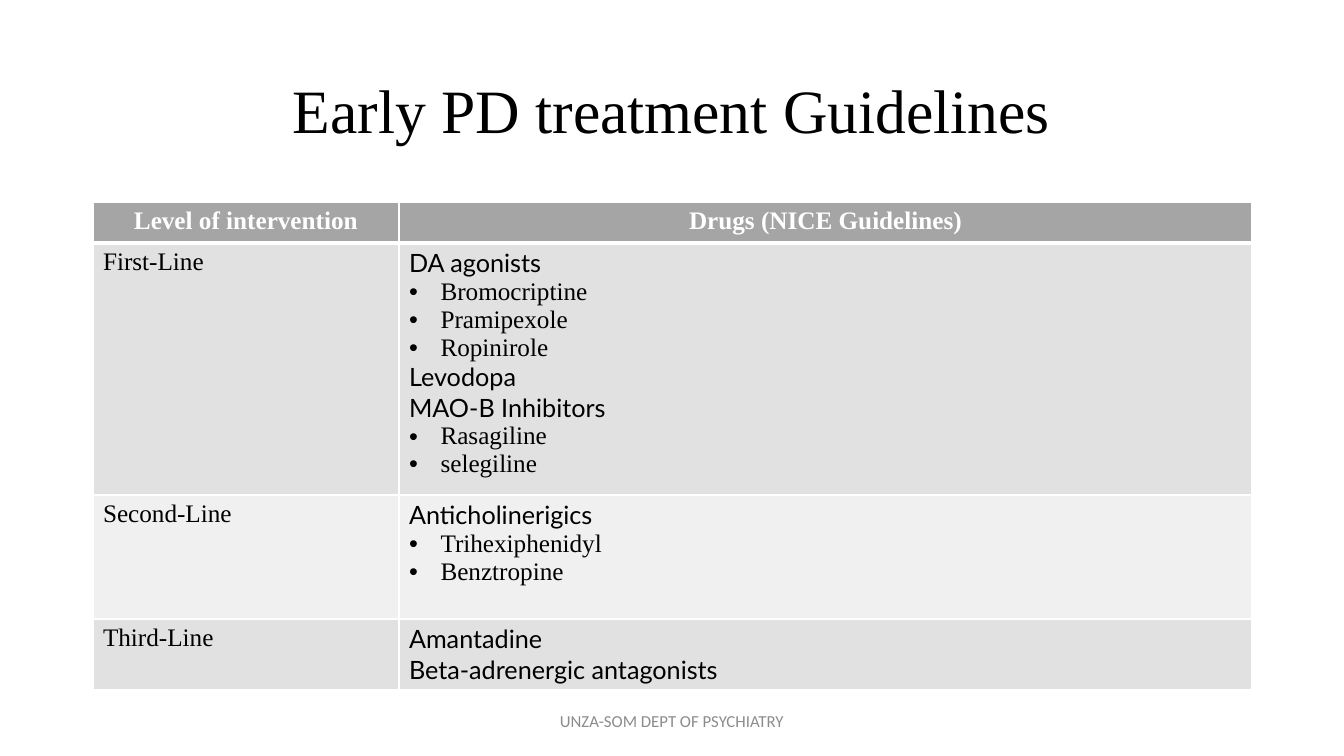
from lxml.etree import SubElement
from pptx import Presentation
from pptx.dml.color import RGBColor
from pptx.enum.text import MSO_ANCHOR as Anchor, PP_ALIGN as Align
from pptx.oxml.ns import qn
from pptx.util import Pt

THEME = {
    "serif": "Times New Roman", "sans": "Lato", "footer_font": "Calibri",
    "title_size": 44, "table_size": 18, "footer_size": 12,
    "black": "000000", "white": "FFFFFF", "footer": "8C8C8C",
    "header": "A5A5A5", "bands": ["E1E1E1", "F0F0F0"],
}
BULLET_INDENT = Pt(22.5)


def write(paragraph, text, font, size, color, bold=False, align=Align.LEFT):
    paragraph.alignment = align
    run = paragraph.add_run()
    run.text = text
    run.font.color.rgb = RGBColor.from_string(color)
    formats = {"name": font, "size": Pt(size), "bold": bold}
    for name, value in formats.items():
        setattr(run.font, name, value)


def style_cell(cell, color, top, bottom):
    properties = cell._tc.get_or_add_tcPr()
    for side, width in {"L": 1, "R": 1, "T": top, "B": bottom}.items():
        line = SubElement(properties, qn(f"a:ln{side}"), w=str(Pt(width)))
        fill = SubElement(line, qn("a:solidFill"))
        SubElement(fill, qn("a:srgbClr"), val=THEME["white"])
    cell.fill.solid()
    cell.fill.fore_color.rgb = RGBColor.from_string(color)


presentation = Presentation()
presentation.slide_width, presentation.slide_height = Pt(960), Pt(540)
slide = presentation.slides.add_slide(presentation.slide_layouts[6])

captions = [
    ("Early PD treatment Guidelines", (66, 28.75, 828, 104.4),
     THEME["serif"], THEME["title_size"], THEME["black"], 0.9),
    ("UNZA-SOM DEPT OF PSYCHIATRY", (318, 500.5, 324, 28.75),
     THEME["footer_font"], THEME["footer_size"], THEME["footer"], 1),
]
for text, box, font, size, color, spacing in captions:
    frame = slide.shapes.add_textbox(*map(Pt, box)).text_frame
    for name, value in {"word_wrap": True, "vertical_anchor": Anchor.MIDDLE}.items():
        setattr(frame, name, value)
    paragraph = frame.paragraphs[0]
    paragraph.line_spacing = spacing
    write(paragraph, text, font, size, color, align=Align.CENTER)

headings = ["Level of intervention", "Drugs (NICE Guidelines)"]
levels = [
    ("First-Line", 171.8, [
        ("DA agonists", ["Bromocriptine", "Pramipexole", "Ropinirole"]),
        ("Levodopa", []),
        ("MAO-B Inhibitors", ["Rasagiline", "selegiline"]),
    ]),
    ("Second-Line", 88.6, [("Anticholinerigics", ["Trihexiphenidyl", "Benztropine"])]),
    ("Third-Line", 50.4, [("Amantadine", []), ("Beta-adrenergic antagonists", [])]),
]
heights = [29.2] + [height for _, height, _ in levels]
table = slide.shapes.add_table(
    len(heights), len(headings), Pt(66.4), Pt(144.3), Pt(828), Pt(sum(heights))
).table
for column, width in zip(table.columns, [218.6, 609.4]):
    column.width = Pt(width)
for row, height in zip(table.rows, heights):
    row.height = Pt(height)

for column, heading in enumerate(headings):
    cell = table.cell(0, column)
    style_cell(cell, THEME["header"], 1, 3)
    write(cell.text_frame.paragraphs[0], heading, THEME["serif"],
          THEME["table_size"], THEME["white"], True, Align.CENTER)

for index, (level, _, drug_classes) in enumerate(levels):
    level_cell, drug_cell = table.rows[index + 1].cells
    for cell in (level_cell, drug_cell):
        style_cell(cell, THEME["bands"][index % 2], 3 if index == 0 else 1, 1)
    write(level_cell.text_frame.paragraphs[0], level, THEME["serif"],
          THEME["table_size"], THEME["black"])

    entries = []
    for drug_class, drugs in drug_classes:
        entries.append((drug_class, False))
        entries.extend((drug, True) for drug in drugs)
    frame = drug_cell.text_frame
    for position, (text, bulleted) in enumerate(entries):
        paragraph = frame.add_paragraph() if position else frame.paragraphs[0]
        write(paragraph, text, THEME["serif" if bulleted else "sans"],
              THEME["table_size"], THEME["black"])
        if bulleted:
            properties = paragraph._p.get_or_add_pPr()
            for name, value in {"marL": BULLET_INDENT, "indent": -BULLET_INDENT}.items():
                properties.set(name, str(value))
            SubElement(properties, qn("a:buFont"), typeface="Arial")
            SubElement(properties, qn("a:buChar"), char="•")

presentation.save("out.pptx")
